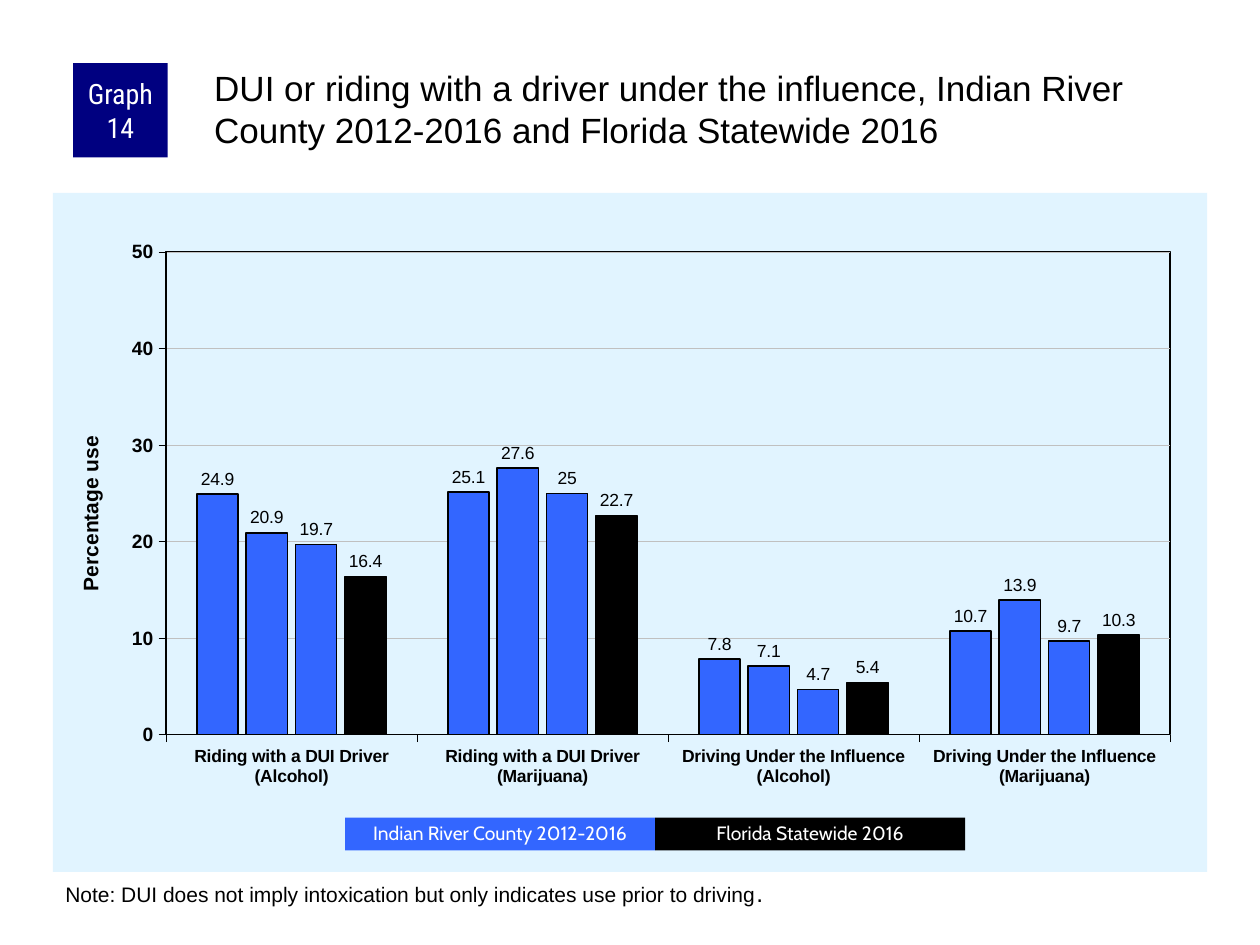
from lxml.etree import fromstring
from pptx import Presentation
from pptx.chart.data import CategoryChartData
from pptx.dml.color import RGBColor
from pptx.enum.chart import XL_CHART_TYPE, XL_LABEL_POSITION, XL_TICK_MARK
from pptx.enum.shapes import MSO_SHAPE
from pptx.enum.text import MSO_ANCHOR, MSO_AUTO_SIZE, PP_ALIGN
from pptx.oxml.ns import qn
from pptx.util import Emu, Pt

PX = 9144  # 100 px to the inch
HEX = {"black": "000000", "white": "FFFFFF", "navy": "000080",
       "blue": "3366FF", "pale": "E1F4FF", "grid": "C0C0C0"}
NS = ('xmlns:c="http://schemas.openxmlformats.org/drawingml/2006/chart" '
      'xmlns:a="http://schemas.openxmlformats.org/drawingml/2006/main"')

CATS = ["Riding with a DUI Driver (Alcohol)",
        "Riding with a DUI Driver (Marijuana)",
        "Driving Under the Influence (Alcohol)",
        "Driving Under the Influence (Marijuana)"]
# values, fill, line width, label format
BARS = [([24.9, 25.1, 7.8, 10.7], "blue", 1, "0.0"),
        ([20.9, 27.6, 7.1, 13.9], "blue", 1, "0.0"),
        ([19.7, 25, 4.7, 9.7], "blue", 0.75, "General"),
        ([16.4, 22.7, 5.4, 10.3], "black", 0.75, "General")]
PLOT = {"x": 0.098, "y": 0.087, "w": 0.87, "h": 0.711}
KEYS = [("Indian River County 2012-2016", "blue"),
        ("Florida Statewide 2016", "black")]


def px(*nums):
    return [Emu(n * PX) for n in nums]


def rgb(name):
    return RGBColor.from_string(HEX[name])


def style(font, size, color="black", name="Arial", bold=False):
    font.size, font.name, font.bold = Pt(size), name, bold
    font.color.rgb = rgb(color)


def stroke(line, color, width):
    line.color.rgb = rgb(color)
    line.width = Pt(width)


def inset(frame, left, top, right, bottom):
    (frame.margin_left, frame.margin_top,
     frame.margin_right, frame.margin_bottom) = px(left, top, right, bottom)


def add_block(slide, box, text, fill, size, font):
    """Add a filled rectangle with centred white text."""
    block = slide.shapes.add_shape(MSO_SHAPE.RECTANGLE, *px(*box))
    block.shadow.inherit = False
    block.fill.solid()
    block.fill.fore_color.rgb = rgb(fill)
    block.line.fill.background()
    frame = block.text_frame
    frame.word_wrap = True
    frame.vertical_anchor = MSO_ANCHOR.MIDDLE
    inset(frame, 5, 0, 5, 0)
    frame.text = text
    para = frame.paragraphs[0]
    para.alignment = PP_ALIGN.CENTER
    style(para.runs[0].font, size, "white", font)
    return para


def add_head(slide, box):
    left, top, width, height = box
    add_block(slide, (left, top, 75, 75), "Graph 14", "navy", 16,
              "Roboto Condensed")
    title = slide.shapes.title
    title.left, title.top, title.width, title.height = px(
        left + 109, top, width - 109, height)
    frame = title.text_frame
    frame.text = ("DUI or riding with a driver under the influence, Indian "
                  "River County 2012-2016 and Florida Statewide 2016")
    frame.auto_size = MSO_AUTO_SIZE.NONE
    frame.vertical_anchor = MSO_ANCHOR.TOP
    inset(frame, 3, 3, 0, 0)
    para = frame.paragraphs[0]
    para.alignment = PP_ALIGN.LEFT
    style(para.runs[0].font, 20)


def set_areas(chart):
    """Fill the chart area, then frame and place the plot area."""
    root = chart.element
    root.find(qn("c:chart")).addnext(fromstring(
        f'<c:spPr {NS}><a:solidFill><a:srgbClr val="{HEX["pale"]}"/>'
        '</a:solidFill><a:ln><a:noFill/></a:ln></c:spPr>'))
    area = root.find(".//" + qn("c:plotArea"))
    for old in area.findall(qn("c:layout")):
        area.remove(old)
    spots = "".join(f'<c:{key} val="{val}"/>' for key, val in PLOT.items())
    area.insert(0, fromstring(
        f'<c:layout {NS}><c:manualLayout><c:layoutTarget val="inner"/>'
        '<c:xMode val="edge"/><c:yMode val="edge"/>'
        f'{spots}</c:manualLayout></c:layout>'))
    area.append(fromstring(
        f'<c:spPr {NS}><a:noFill/><a:ln w="9525"><a:solidFill>'
        f'<a:srgbClr val="{HEX["black"]}"/></a:solidFill></a:ln></c:spPr>'))


def set_axes(chart):
    for axis, size in ((chart.category_axis, 10), (chart.value_axis, 11)):
        axis.major_tick_mark = XL_TICK_MARK.OUTSIDE
        axis.minor_tick_mark = XL_TICK_MARK.NONE
        stroke(axis.format.line, "black", 0.25)
        style(axis.tick_labels.font, size, bold=True)
    axis = chart.value_axis
    axis.minimum_scale, axis.maximum_scale, axis.major_unit = 0, 50, 10
    axis.tick_labels.number_format = "0"
    axis.tick_labels.number_format_is_linked = False
    stroke(axis.major_gridlines.format.line, "grid", 0.25)
    frame = axis.axis_title.text_frame
    frame.text = "Percentage use"
    style(frame.paragraphs[0].runs[0].font, 12, bold=True)


def add_bars(slide, box):
    data = CategoryChartData()
    data.categories = CATS
    for num, (vals, *_) in enumerate(BARS, 1):
        data.add_series(f"Series {num}", vals)
    chart = slide.shapes.add_chart(
        XL_CHART_TYPE.COLUMN_CLUSTERED, *px(*box), data).chart
    chart.has_title = chart.has_legend = False
    style(chart.font, 11.5)
    plot = chart.plots[0]
    plot.gap_width, plot.overlap = 150, -20
    plot.vary_by_categories = False
    for series, (_, color, width, form) in zip(plot.series, BARS):
        series.format.fill.solid()
        series.format.fill.fore_color.rgb = rgb(color)
        stroke(series.format.line, "black", width)
        labels = series.data_labels
        labels.show_value = True
        labels.position = XL_LABEL_POSITION.OUTSIDE_END
        labels.number_format = form
        labels.number_format_is_linked = False
        style(labels.font, 10)
    set_axes(chart)
    set_areas(chart)


def add_keys(slide, box):
    left, top, width, height = box
    step = width // len(KEYS)
    for num, (text, fill) in enumerate(KEYS):
        spot = (left + num * step, top, step, height)
        para = add_block(slide, spot, text, fill, 11, "Cabin")
        para.line_spacing = 0.9


def add_note(slide, box):
    frame = slide.shapes.add_textbox(*px(*box)).text_frame
    frame.word_wrap = True
    para = frame.paragraphs[0]
    for text, size in (("Note: DUI does not imply intoxication but only "
                        "indicates use prior to driving", 12), (".", 14)):
        run = para.add_run()
        run.text = text
        style(run.font, size)


def main():
    deck = Presentation()
    deck.slide_width, deck.slide_height = px(1000, 750)
    slide = deck.slides.add_slide(deck.slide_layouts[5])
    add_bars(slide, (42, 153, 916, 539))
    add_head(slide, (58, 50, 901, 83))
    add_note(slide, (42, 692, 917, 34))
    add_keys(slide, (274, 649, 492, 26))
    deck.save("out.pptx")


if __name__ == "__main__":
    main()
